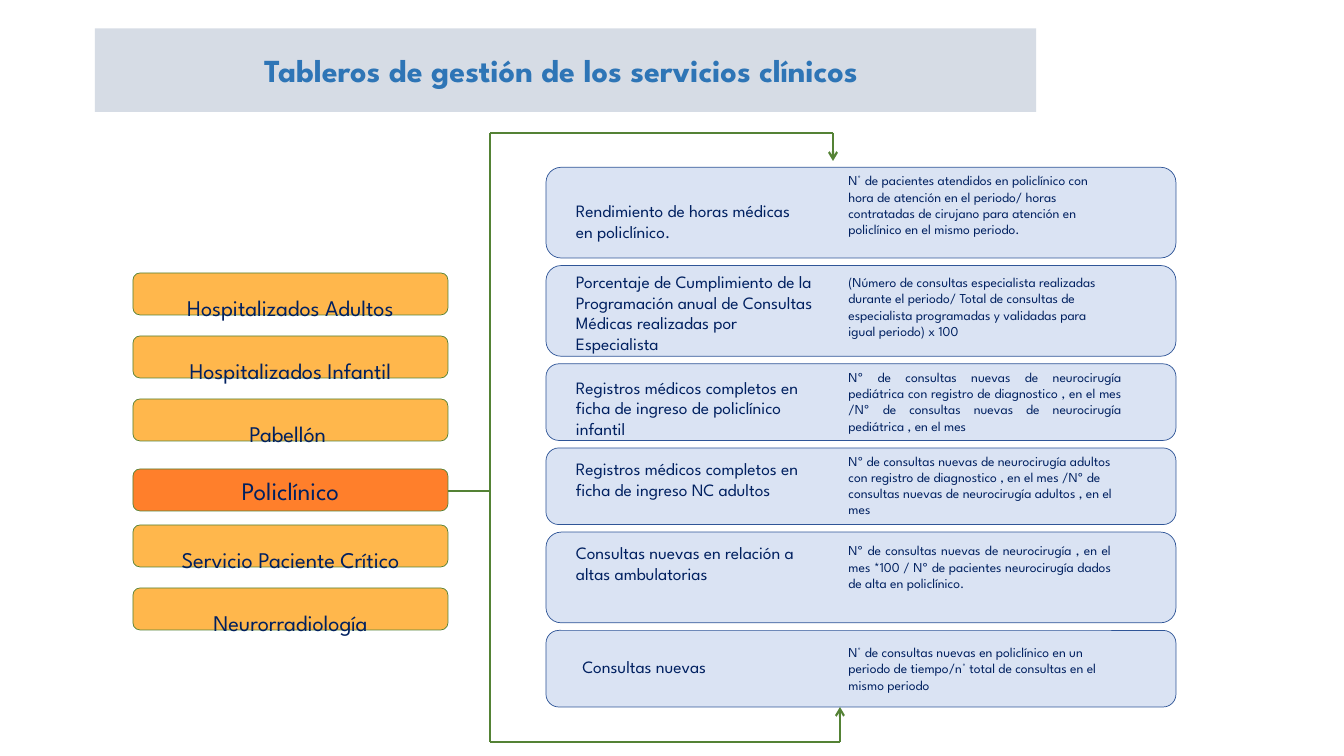
from lxml import etree
from pptx import Presentation
from pptx.dml.color import RGBColor
from pptx.enum.shapes import MSO_CONNECTOR as CONN, MSO_SHAPE as SHAPE
from pptx.enum.text import MSO_ANCHOR as ANCHOR, MSO_AUTO_SIZE as FIT, PP_ALIGN as ALIGN
from pptx.oxml.ns import qn
from pptx.util import Pt

FONT = "League Spartan"
NAVY, GREEN = "002060", "548235"

SERVICES = ["Hospitalizados Adultos", "Hospitalizados Infantil", "Pabellón ",
            "Policlínico", "Servicio Paciente Crítico", "Neurorradiología"]
ACTIVE = "Policlínico"

TALL, SHORT, GAP = 64.8, 54.7, 5.4
INDICATORS = [
    (TALL, (405.4, 139.7, 180), [("Rendimiento de horas médicas en policlínico", 12.4), (".", 12)],
     (119.5, 200, ALIGN.LEFT),
     "N° de pacientes atendidos en policlínico con hora de atención en el periodo/ horas "
     "contratadas de cirujano para atención en policlínico en el mismo periodo."),
    (TALL, (405.4, 190, 184), [("Porcentaje de Cumplimiento de la Programación anual de Consultas "
                                "Médicas realizadas por Especialista", 12.4)],
     (192.2, 200, ALIGN.LEFT),
     "(Número de consultas especialista realizadas durante el periodo/ Total de consultas de "
     "especialista programadas y validadas para igual periodo) x 100"),
    (SHORT, (405.4, 265.7, 185), [("Registros médicos completos en ficha de ingreso de policlínico "
                                   "infantil", 12.4)],
     (260, 207.4, ALIGN.JUSTIFY),
     "Nº de consultas nuevas de neurocirugía pediátrica con registro de diagnostico , en el mes "
     "/Nº de consultas nuevas de neurocirugía pediátrica , en el mes "),
    (SHORT, (405.4, 324, 180), [("Registros médicos completos en ficha de ingreso NC adultos", 12.4)],
     (319.7, 207.4, ALIGN.LEFT),
     "Nº de consultas nuevas de neurocirugía adultos con registro de diagnostico , en el mes "
     "/Nº de consultas nuevas de neurocirugía adultos , en el mes"),
    (TALL, (405.4, 383.8, 180), [("Consultas nuevas en relación a altas ambulatorias", 12.4)],
     (383.8, 200, ALIGN.JUSTIFY),
     "Nº de consultas nuevas de neurocirugía , en el mes *100 / Nº de pacientes neurocirugía "
     "dados de alta en policlínico."),
    (SHORT, (410, 465.1, 180), [("Consultas nuevas", 12.4)],
     (456.5, 200, ALIGN.LEFT),
     "N° de consultas nuevas en policlínico en un periodo de tiempo/n° total de consultas en el "
     "mismo periodo"),
]


def rgb(code):
    """Turn a hex string into a colour."""
    return RGBColor.from_string(code)


def add_runs(p, runs, color=NAVY, bold=False):
    """Add (text, size) runs to a paragraph."""
    for text, size in runs:
        r = p.add_run()
        r.text = text
        r.font.name = FONT
        r.font.size = Pt(size)
        r.font.bold = bold
        r.font.color.rgb = rgb(color)


def add_title(s, text):
    """Fill and place the title placeholder as a banner."""
    sp = s.shapes.title
    sp.left, sp.top, sp.width, sp.height = Pt(67.7), Pt(20.2), Pt(672.5), Pt(59.8)
    sp.fill.solid()
    sp.fill.fore_color.rgb = rgb("D6DCE5")
    tf = sp.text_frame
    tf.auto_size = FIT.NONE
    tf.vertical_anchor = ANCHOR.MIDDLE
    p = tf.paragraphs[0]
    p.alignment = ALIGN.CENTER
    add_runs(p, [(text, 22.9)], "2E75B6", True)


def add_panel(s, left, top, width, height, fill, line, alpha=100):
    """Add a rounded panel with a thin outline."""
    sp = s.shapes.add_shape(SHAPE.ROUNDED_RECTANGLE, Pt(left), Pt(top), Pt(width), Pt(height))
    sp.shadow.inherit = False
    sp.fill.solid()
    sp.fill.fore_color.rgb = rgb(fill)
    sp.line.color.rgb = rgb(line)
    sp.line.width = Pt(0.5)
    if alpha < 100:
        color = sp.fill._xPr.find(qn("a:solidFill"))[0]
        etree.SubElement(color, qn("a:alpha")).set("val", str(alpha * 1000))
    return sp


def add_service(s, top, text, active):
    """Add one service button, highlighted when active."""
    fill, alpha, size = ("FF6600", 83, 18) if active else ("FF9900", 70, 16)
    tf = add_panel(s, 95, top, 225, 30, fill, GREEN, alpha).text_frame
    tf.vertical_anchor = ANCHOR.MIDDLE
    p = tf.paragraphs[0]
    p.alignment = ALIGN.CENTER
    p.line_spacing = 1.0 if active else 2.0
    add_runs(p, [(text, size)])


def add_text(s, left, top, width, height, runs, align=ALIGN.LEFT):
    """Add a wrapping text box."""
    tf = s.shapes.add_textbox(Pt(left), Pt(top), Pt(width), Pt(height)).text_frame
    tf.word_wrap = True
    tf.auto_size = FIT.SHAPE_TO_FIT_TEXT
    tf.margin_left = tf.margin_right = Pt(6)
    tf.margin_top = tf.margin_bottom = Pt(3.5)
    p = tf.paragraphs[0]
    p.alignment = align
    add_runs(p, runs)


def add_line(group, x1, y1, x2, y2, arrow=False):
    """Add a green straight connector, optionally with an arrowhead."""
    line = group.shapes.add_connector(CONN.STRAIGHT, Pt(x1), Pt(y1), Pt(x2), Pt(y2))
    line.line.color.rgb = rgb(GREEN)
    line.line.width = Pt(1.5)
    if arrow:
        etree.SubElement(line.line._get_or_add_ln(), qn("a:tailEnd")).set("type", "arrow")
    etree.SubElement(line._element.spPr, qn("a:effectLst"))


def add_bracket(s):
    """Link the active service to the top and bottom of the indicators."""
    group = s.shapes.add_group_shape()
    trunk, top, bottom = 350, 95, 530
    add_line(group, trunk, 351, 320, 351)
    add_line(group, trunk, top, trunk, bottom)
    for x, y, tip in ((595, top, 115), (600, bottom, 505)):
        add_line(group, x, y, trunk, y)
        add_line(group, x, y, x, tip, arrow=True)


def main():
    """Build the slide and save it."""
    prs = Presentation()
    prs.slide_width, prs.slide_height = Pt(960), Pt(540)
    s = prs.slides.add_slide(prs.slide_layouts[5])
    add_title(s, "Tableros de gestión de los servicios clínicos ")
    for i, name in enumerate(SERVICES):
        active = name == ACTIVE
        add_service(s, 195 + 45 * i + (5 if active else 0), name, active)
    top = 119.5
    for height, (x, y, width), name, (formula_y, formula_width, align), formula in INDICATORS:
        add_panel(s, 390, top, 450, height, "DAE3F3", "2F5597")
        add_text(s, x, y, width, 40, name)
        add_text(s, 600, formula_y, formula_width, 54, [(formula, 9.7)], align)
        top += height + GAP
    add_bracket(s)
    prs.save("out.pptx")


if __name__ == "__main__":
    main()
